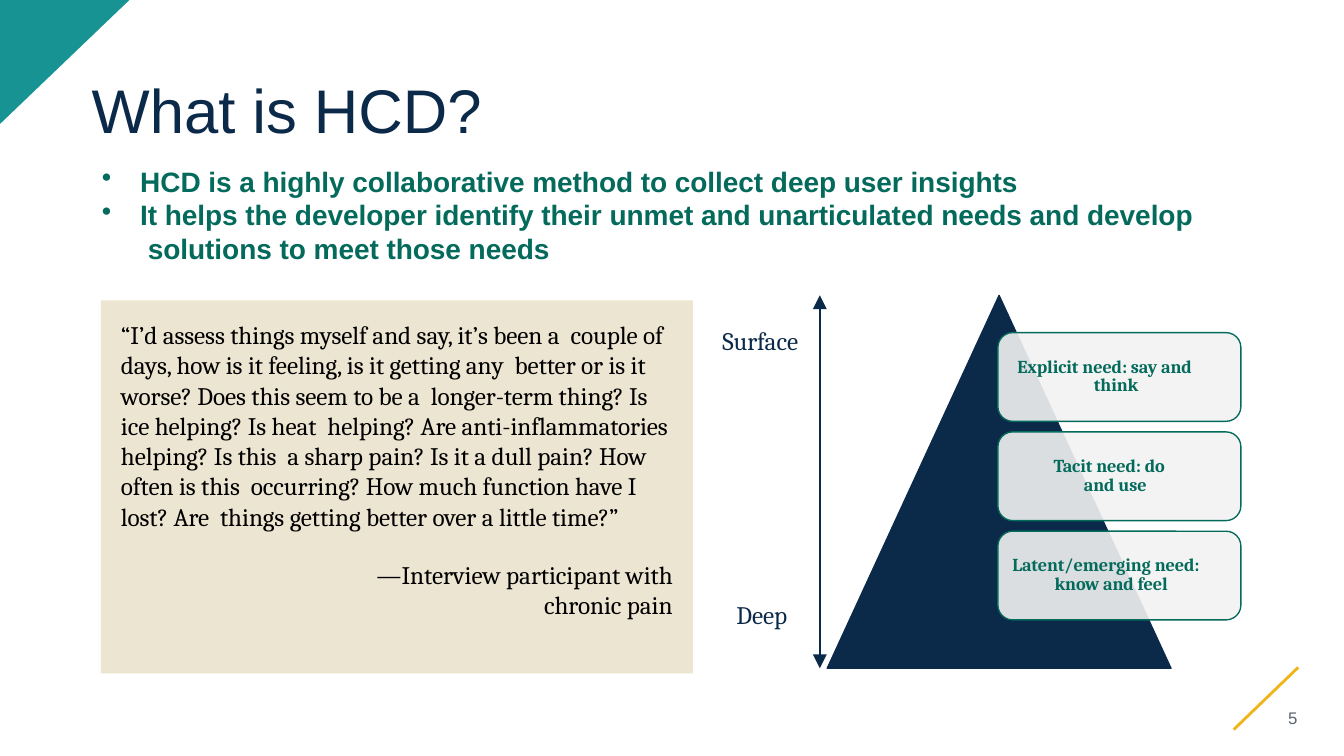
import pptx
import pptx.util
import pptx.dml.color
import pptx.enum.shapes
import pptx.enum.text
import pptx.oxml.ns
import lxml.etree

SHAPE = pptx.enum.shapes.MSO_SHAPE
ALIGN = pptx.enum.text.PP_ALIGN
ANCHOR = pptx.enum.text.MSO_ANCHOR
Inches, Pt = pptx.util.Inches, pptx.util.Pt
qn = pptx.oxml.ns.qn

# Content
TITLE = "What is HCD?"
BULLETS = [
    "HCD is a highly collaborative method to collect deep user insights",
    "It helps the developer identify their unmet and unarticulated needs "
    "and develop  solutions to meet those needs",
]
QUOTE = (
    "“I’d assess things myself and say, it’s been a  couple of days, how is it "
    "feeling, is it getting any  better or is it worse? Does this seem to be a  "
    "longer-term thing? Is ice helping? Is heat  helping? Are anti-inflammatories "
    "helping? Is this  a sharp pain? Is it a dull pain? How often is this  "
    "occurring? How much function have I lost? Are  things getting better over "
    "a little time?”"
)
SPEAKER = ["—Interview participant with", "chronic pain"]
# Need, side inset and hanging indent in inches
NEEDS = [
    ("Explicit need: say and  think", 0.14, 0.76),
    ("Tacit need: do  and use", 0.5, 0.3),
    ("Latent/emerging need:  know and feel", 0.09, 0.42),
]
PAGE = "5"

# Places as percent of the slide: left, top, width, height
TITLE_BOX = (6.75, 9.47, 40, 10)
BULLET_BOX = (7.5, 21.73, 81.5, 13.6)
QUOTE_BOX = (7.5, 39.73, 44.05, 49.33)
PYRAMID = (61.55, 39.07, 25.58, 49.33)
FIRST_CARD, CARD_STEP = (74.25, 44, 18.08, 11.73), 13.13
AXIS_X = 61
DEPTHS = [("Surface", (53.75, 43.07, 6.45, 4.27)), ("Deep", (54.8, 79.33, 4.5, 4.27))]
PAGE_BOX = (95.85, 93.6, 1, 2.8)
CORNER = (9.63, 16.4)
SLASH = (91.8, 96.5, 96.6, 88.27)

NAVY, GREEN, TEAL, GOLD = "0B2949", "046B5C", "189394", "F1B51C"
SAND, PALE, GREY, BLACK = "E0D4B5", "F2F2F2", "5B6771", "000000"

prs = pptx.Presentation()
prs.slide_width, prs.slide_height = Inches(13.333), Inches(7.5)
s = prs.slides.add_slide(prs.slide_layouts[5])


def place(a, b, *size):
    """Turn percent pairs (x, y, x, y) into slide lengths."""
    scale = (prs.slide_width, prs.slide_height) * 2
    return [round(v * m / 100) for v, m in zip((a, b) + size, scale)]


def color(value):
    return pptx.dml.color.RGBColor.from_string(value)


def paint(sp, fill, line=None, width=0.96, alpha=100):
    sp.shadow.inherit = False
    sp.fill.solid()
    sp.fill.fore_color.rgb = color(fill)
    if alpha < 100:
        srgb = sp.fill._xPr.find(".//" + qn("a:srgbClr"))
        lxml.etree.SubElement(srgb, qn("a:alpha"), val=str(alpha * 1000))
    if line:
        sp.line.color.rgb = color(line)
        sp.line.width = Pt(width)
    else:
        sp.line.fill.background()


def frame(sp, left=0, top=0, right=0, anchor=ANCHOR.TOP, wrap=True):
    tf = sp.text_frame
    tf.margin_left, tf.margin_top = Inches(left), Inches(top)
    tf.margin_right, tf.margin_bottom = Inches(right), 0
    tf.vertical_anchor, tf.word_wrap = anchor, wrap
    return tf


def write(tf, text, size, font, fill, bold=False, align=ALIGN.LEFT, hang=0, bullet=None, spc=0):
    p = tf.paragraphs[0] if not tf.paragraphs[0].runs else tf.add_paragraph()
    p.alignment = align
    pPr = p._p.get_or_add_pPr()
    if hang:
        pPr.set("marL", str(Inches(hang + 0.01)))
        pPr.set("indent", str(-Inches(hang)))
    if bullet:
        lxml.etree.SubElement(pPr, qn("a:buChar"), char=bullet)
    r = p.add_run()
    r.text = text
    r.font.size, r.font.name, r.font.bold = Pt(size), font, bold
    r.font.color.rgb = color(fill)
    if spc:
        r._r.get_or_add_rPr().set("spc", str(spc))
    return p


def text_box(box, text, size, font, fill, **style):
    tf = frame(s.shapes.add_textbox(*place(*box)), wrap=False)
    return write(tf, text, size, font, fill, **style)


def connect(ends, line, width):
    c = s.shapes.add_connector(pptx.enum.shapes.MSO_CONNECTOR.STRAIGHT, *place(*ends))
    c.line.color.rgb = color(line)
    c.line.width = Pt(width)
    lxml.etree.SubElement(c._element.spPr, qn("a:effectLst"))
    return c


# Corner triangle and slash
corner_x, corner_y = place(*CORNER)
outline = s.shapes.build_freeform(0, 0)
outline.add_line_segments([(corner_x, 0), (0, corner_y)])
paint(outline.convert_to_shape(), TEAL)
connect(SLASH, GOLD, 2.04)

# Title
title = s.shapes.title
title.left, title.top, title.width, title.height = place(*TITLE_BOX)
tf = frame(title, left=0.01)
tf.auto_size = pptx.enum.text.MSO_AUTO_SIZE.NONE
write(tf, TITLE, 44, "Arial", NAVY)

# Bullets
tf = frame(s.shapes.add_textbox(*place(*BULLET_BOX)))
for point in BULLETS:
    write(tf, point, 20, "Arial", GREEN, bold=True, hang=0.38, bullet="•", spc=-5)

# Quote panel
panel = s.shapes.add_shape(SHAPE.RECTANGLE, *place(*QUOTE_BOX))
paint(panel, SAND, alpha=60)
tf = frame(panel, 0.2, 0.19, 0.2)
write(tf, QUOTE, 18, "Cambria", BLACK, spc=-5)
for i, part in enumerate(SPEAKER):
    p = write(tf, part, 18, "Cambria", BLACK, align=ALIGN.RIGHT, spc=-5)
    p.space_before = Pt(0 if i else 20)

# Pyramid with its need cards
paint(s.shapes.add_shape(SHAPE.ISOSCELES_TRIANGLE, *place(*PYRAMID)), NAVY, NAVY)
left, top, width, height = FIRST_CARD
for i, (need, inset, hang) in enumerate(NEEDS):
    card = s.shapes.add_shape(
        SHAPE.ROUNDED_RECTANGLE, *place(left, top + i * CARD_STEP, width, height))
    paint(card, PALE, GREEN, alpha=90)
    tf = frame(card, inset, 0, inset, ANCHOR.MIDDLE)
    p = write(tf, need, 13, "Cambria", GREEN, bold=True, hang=hang, spc=-5)
    p.line_spacing = Pt(13.3)

# Depth axis
axis = connect((AXIS_X, PYRAMID[1], AXIS_X, PYRAMID[1] + PYRAMID[3]), NAVY, 1)
for end in ("a:headEnd", "a:tailEnd"):
    lxml.etree.SubElement(axis.line._get_or_add_ln(), qn(end), type="triangle", w="lg", len="lg")
for depth, box in DEPTHS:
    text_box(box, depth, 18, "Cambria", NAVY, spc=-5)

# Page number
text_box(PAGE_BOX, PAGE, 12, "Arial", GREY)

prs.save("out.pptx")
